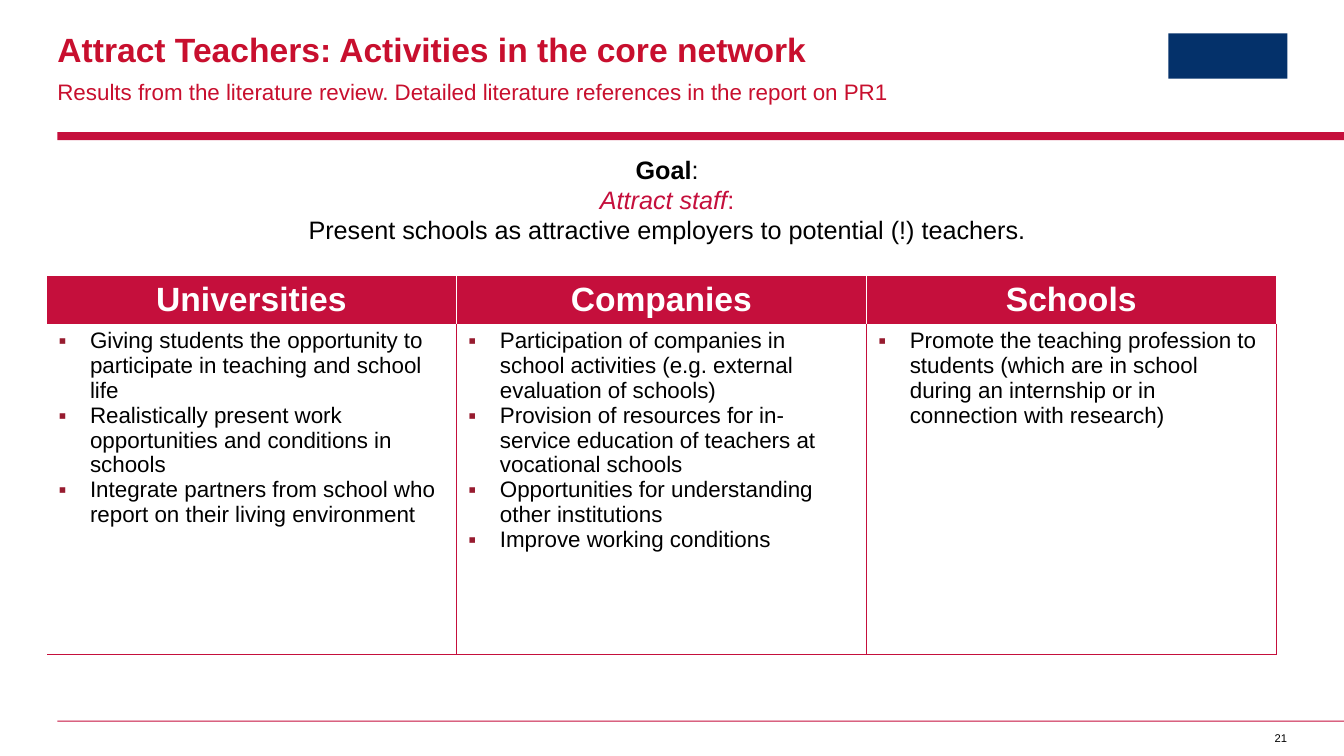
from lxml import etree
from pptx import Presentation
from pptx.dml.color import RGBColor
from pptx.enum.shapes import MSO_SHAPE
from pptx.enum.text import MSO_ANCHOR, PP_ALIGN
from pptx.oxml.ns import qn
from pptx.util import Pt

RECT = MSO_SHAPE.RECTANGLE
LEFT, MID, RIGHT = PP_ALIGN.LEFT, PP_ALIGN.CENTER, PP_ALIGN.RIGHT
TOP, CENTER = MSO_ANCHOR.TOP, MSO_ANCHOR.MIDDLE
COLORS = {"red": "C50F3C", "title": "C80F2E", "bullet": "971B2F",
          "navy": "04316A", "white": "FFFFFF", "black": "000000"}
SIDES = {"l": "a:lnL", "r": "a:lnR", "t": "a:lnT", "b": "a:lnB"}
EDGE = 41


class Deck:
    font = "Arial"

    def __init__(self, wide, high):
        self.prs = Presentation()
        self.prs.slide_width, self.prs.slide_height = Pt(wide), Pt(high)
        self.slide = self.prs.slides.add_slide(self.prs.slide_layouts[6])

    def color(self, name):
        return RGBColor.from_string(COLORS[name])

    def bar(self, x, y, w, h, fill):
        box = self.slide.shapes.add_shape(RECT, Pt(x), Pt(y), Pt(w), Pt(h))
        box.shadow.inherit = False
        box.fill.solid()
        box.fill.fore_color.rgb = self.color(fill)
        box.line.fill.background()

    def run(self, para, text, size, color="black", bold=False, slant=False):
        run = para.add_run()
        run.text = text
        font = run.font
        font.name, font.size = self.font, Pt(size)
        font.bold, font.italic = bold, slant
        font.color.rgb = self.color(color)

    def text(self, x, y, w, h, pad=(0, 0, 0, 0), wrap=True):
        box = self.slide.shapes.add_textbox(Pt(x), Pt(y), Pt(w), Pt(h))
        frame = box.text_frame
        frame.word_wrap = wrap
        self.inset(frame, pad)
        return frame

    def inset(self, item, pad):
        (item.margin_left, item.margin_top,
         item.margin_right, item.margin_bottom) = map(Pt, pad)

    def bullet(self, para, indent):
        props = para._p.get_or_add_pPr()
        props.set("marL", str(Pt(indent)))
        props.set("indent", str(-Pt(indent)))
        tint = etree.SubElement(props, qn("a:buClr"))
        etree.SubElement(tint, qn("a:srgbClr"), val=COLORS["bullet"])
        etree.SubElement(props, qn("a:buFont"), typeface=self.font)
        etree.SubElement(props, qn("a:buChar"), char="▪")

    def border(self, cell, edges):
        props = cell._tc.get_or_add_tcPr()
        for side, tag in SIDES.items():
            if side in edges:
                color, width = edges[side]
                line = etree.SubElement(props, qn(tag), w=str(Pt(width)))
                fill = etree.SubElement(line, qn("a:solidFill"))
                etree.SubElement(fill, qn("a:srgbClr"), val=COLORS[color])

    def cell(self, cell, edges, anchor, fill=None):
        self.border(cell, edges)
        self.inset(cell, (8.64, 3, 8.64, 3))
        cell.vertical_anchor = anchor
        if fill:
            cell.fill.solid()
            cell.fill.fore_color.rgb = self.color(fill)
        else:
            cell.fill.background()

    def table(self, x, y, w, rows, data):
        frame = self.slide.shapes.add_table(
            len(rows), len(data), Pt(x), Pt(y), Pt(w), Pt(sum(rows)))
        grid = frame.table
        grid.first_row = grid.horz_banding = False
        for row, high in zip(grid.rows, rows):
            row.height = Pt(high)
        thin = ("red", 0.25)
        for col, (head, points) in enumerate(data.items()):
            grid.columns[col].width = Pt(w / len(data))
            top, body = grid.cell(0, col), grid.cell(1, col)
            self.cell(top, {"l": ("white", 0.5), "r": ("white", 0.5),
                            "t": ("white", 1)}, CENTER, "red")
            para = top.text_frame.paragraphs[0]
            para.alignment = MID
            self.run(para, head, 24, "white", bold=True)
            left = thin if col else ("white", 1)
            self.cell(body, {"l": left, "r": thin, "b": thin}, TOP)
            text = body.text_frame
            for num, point in enumerate(points):
                para = text.add_paragraph() if num else text.paragraphs[0]
                para.alignment = LEFT
                self.bullet(para, 22.5)
                self.run(para, point, 16)


def main():
    deck = Deck(960, 540)
    deck.bar(EDGE, 94.3, 960 - EDGE, 5.8, "red")
    deck.bar(EDGE, 514.8, 960 - EDGE, 0.72, "red")
    deck.bar(834.5, 23.8, 85, 32.4, "navy")

    title = deck.text(EDGE, 23.8, 539, 26).paragraphs[0]
    title.line_spacing = 0.9
    deck.run(title, "Attract Teachers: Activities in the core network",
             24, "title", bold=True)

    page = deck.text(904.3, 522.7, 15.1, 9.4, wrap=False).paragraphs[0]
    page.alignment = RIGHT
    deck.run(page, "21", 8)

    deck.table(33.2, 196.8, 878.4, (33, 236), {
        "Universities": (
            "Giving students the opportunity to participate in teaching and school life",
            "Realistically present work opportunities and conditions in schools",
            "Integrate partners from school who report on their living environment"),
        "Companies": (
            "Participation of companies in school activities (e.g. external evaluation of schools)",
            "Provision of resources for in-service education of teachers at vocational schools",
            "Opportunities for understanding other institutions",
            "Improve working conditions"),
        "Schools": (
            "Promote the teaching profession to students (which are in school during "
            "an internship or in connection with research)",)})

    goal = deck.text(EDGE, 106.6, 871, 72.7, (7.2, 3.6, 7.2, 3.6))
    head, aim = goal.paragraphs[0], goal.add_paragraph()
    head.alignment = aim.alignment = MID
    deck.run(head, "Goal", 18, bold=True)
    deck.run(head, ":", 18)
    deck.run(aim, "Attract staff", 18, "red", slant=True)
    deck.run(aim, ":", 18, "red")
    aim.add_line_break()
    deck.run(aim, "Present schools as attractive employers to potential (!) teachers.", 18)

    note = deck.text(EDGE, 54, 672, 19.4, (0, 0, 28, 0)).paragraphs[0]
    note.line_spacing, note.space_after = 1.1, Pt(12)
    deck.run(note, "Results from the literature review. Detailed literature "
             "references in the report on PR1", 16, "title")

    deck.prs.save("out.pptx")


if __name__ == "__main__":
    main()
